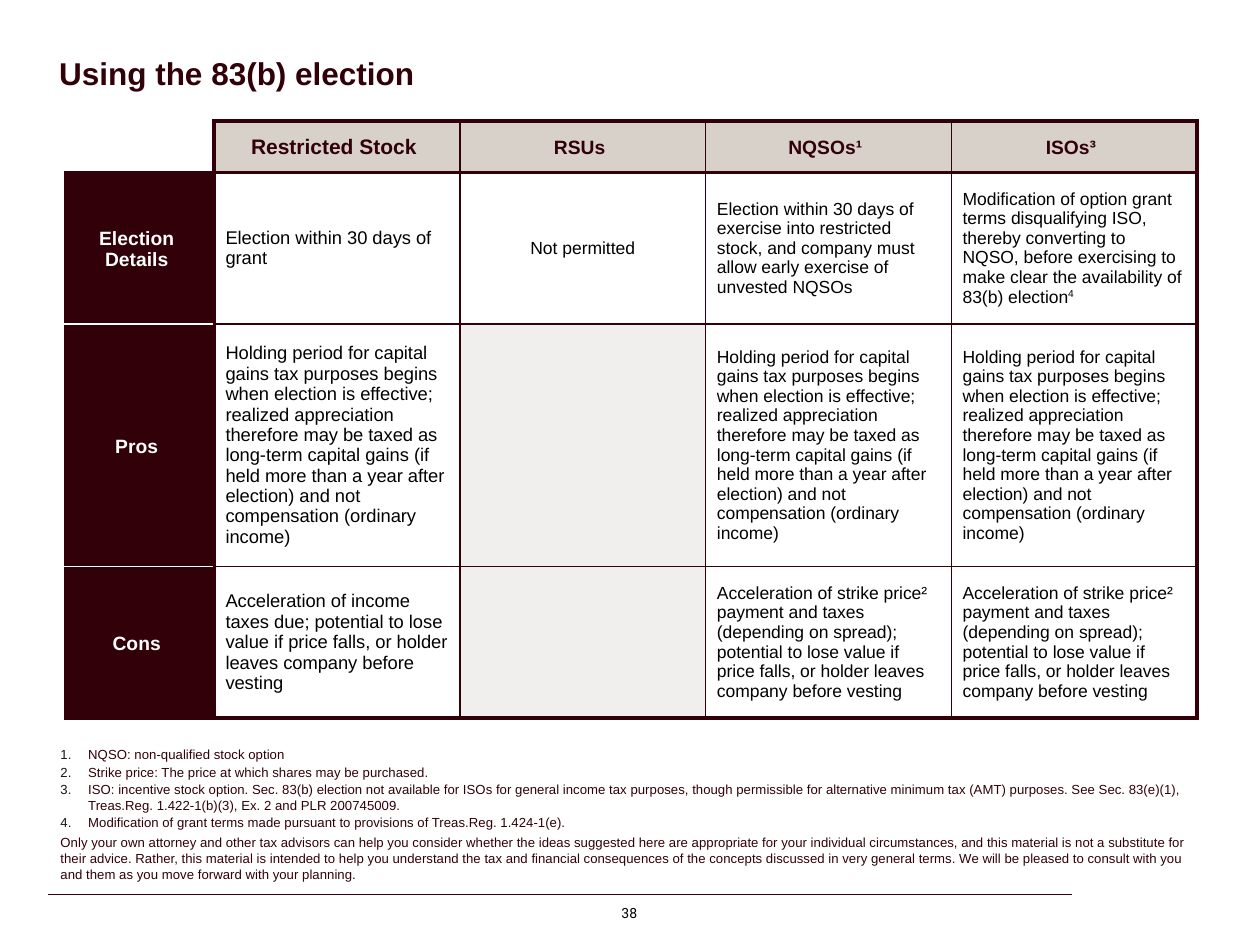
from pptx import Presentation
from pptx.dml.color import RGBColor
from pptx.enum.shapes import MSO_CONNECTOR
from pptx.enum.text import MSO_ANCHOR, PP_ALIGN
from pptx.oxml.ns import qn
from pptx.util import Inches, Pt
from lxml import etree

CENTER, LEFT = PP_ALIGN.CENTER, PP_ALIGN.LEFT
MIDDLE, BOTTOM = MSO_ANCHOR.MIDDLE, MSO_ANCHOR.BOTTOM

THEME = {
    "font": "Arial", "number_font": "Roboto",
    "maroon": "310008", "header": "D8D1CA", "empty": "F1EFED",
    "white": "FFFFFF", "black": "000000", "marker": "181512",
    "title": 18, "first_heading": 12, "heading": 11,
    "first_body": 10.5, "body": 10, "note": 7.5, "number": 8,
    "heavy": 2.25, "thin": 1, "rule": 0.5,
}

TITLE = "Using the 83(b) election"
PAGE_NUMBER = "38"
HOLDING = ("Holding period for capital gains tax purposes begins when election is effective; "
           "realized appreciation therefore may be taxed as long-term capital gains (if held "
           "more than a year after election) and not compensation (ordinary income)")
STRIKE = ("Acceleration of strike price² payment and taxes (depending on spread); potential to "
          "lose value if price falls, or holder leaves company before vesting")
ROWS = [
    ["", "Restricted Stock", "RSUs", "NQSOs¹", "ISOs³"],
    ["Election Details", "Election within 30 days of grant", "Not permitted",
     "Election within 30 days of exercise into restricted stock, and company must allow early "
     "exercise of unvested NQSOs",
     "Modification of option grant terms disqualifying ISO, thereby converting to NQSO, before "
     "exercising to make clear the availability of 83(b) election"],
    ["Pros", HOLDING, "", HOLDING, HOLDING],
    ["Cons", "Acceleration of income taxes due; potential to lose value if price falls, or "
     "holder leaves company before vesting", "", STRIKE, STRIKE],
]
SUPERSCRIPTS = {(1, 4): "4"}
COLUMN_WIDTHS = [1.18] + [1.95] * 4
ROW_HEIGHTS = [0.41, 1.2, 1.79, 1.2]

NOTES = [
    "NQSO: non-qualified stock option",
    "Strike price: The price at which shares may be purchased.",
    "ISO: incentive stock option. Sec. 83(b) election not available for ISOs for general income "
    "tax purposes, though permissible for alternative minimum tax (AMT) purposes. See Sec. "
    "83(e)(1), Treas.Reg. 1.422-1(b)(3), Ex. 2 and PLR 200745009.",
    "Modification of grant terms made pursuant to provisions of Treas.Reg. 1.424-1(e).",
]
DISCLAIMER = (
    "Only your own attorney and other tax advisors can help you consider whether the ideas "
    "suggested here are appropriate for your individual circumstances, and this material is not "
    "a substitute for their advice. Rather, this material is intended to help you understand the "
    "tax and financial consequences of the concepts discussed in very general terms. We will be "
    "pleased to consult with you and them as you move forward with your planning.")


def color(name):
    return RGBColor.from_string(THEME[name])


def write(para, text, size, ink="maroon", bold=False, align=LEFT, font="font",
          before=0, after=0, line=None, superscript=""):
    para.alignment = align
    para.space_before, para.space_after = Pt(before), Pt(after)
    if line:
        para.line_spacing = line
    for words, raised in ((text, False), (superscript, True)):
        if not words:
            continue
        span = para.add_run()
        span.text = words
        span.font.name, span.font.size = THEME[font], Pt(THEME[size])
        span.font.bold, span.font.color.rgb = bold, color(ink)
        if raised:
            span.font._element.set("baseline", "30000")


def number(para):
    """Give the paragraph an automatic number with a hanging indent."""
    props = para._p.get_or_add_pPr()
    props.set("marL", str(Inches(0.22)))
    props.set("indent", str(-Inches(0.22)))
    tint = etree.SubElement(props, qn("a:buClr"))
    etree.SubElement(tint, qn("a:srgbClr"), val=THEME["marker"])
    etree.SubElement(props, qn("a:buFont"), typeface=THEME["font"])
    etree.SubElement(props, qn("a:buAutoNum"), type="arabicPeriod")


def add_box(page, left, top, width, height, anchor, inset=0, wrap=True):
    frame = page.shapes.add_textbox(Inches(left), Inches(top), Inches(width),
                                    Inches(height)).text_frame
    frame.word_wrap, frame.vertical_anchor = wrap, anchor
    frame.margin_left = frame.margin_right = 0
    frame.margin_top = frame.margin_bottom = Inches(inset)
    return frame


def edge(row, column, side):
    """Return the (colour, weight) of one side of a cell, or None for no line."""
    last_row, last_column = len(ROWS) - 1, len(COLUMN_WIDTHS) - 1
    if (row, column) == (0, 0) and side in "LT":
        return None
    if side in "LR":
        boundary = column + (side == "R")
        heavy = boundary in (0, 1, last_column + 1)
    else:
        boundary = row + (side == "B")
        heavy = boundary in (0, 1, last_row + 1)
        if column == 0 and not heavy:
            return "white", "thin"
    return "maroon", "heavy" if heavy else "thin"


def draw_borders(cell, row, column):
    props = cell._tc.get_or_add_tcPr()
    for index, side in enumerate("LRTB"):
        line = etree.Element(qn(f"a:ln{side}"))
        props.insert(index, line)
        style = edge(row, column, side)
        if style is None:
            etree.SubElement(line, qn("a:noFill"))
            continue
        ink, weight = style
        line.set("w", str(Pt(THEME[weight])))
        fill = etree.SubElement(line, qn("a:solidFill"))
        etree.SubElement(fill, qn("a:srgbClr"), val=THEME[ink])


def cell_format(row, column):
    if row == 0:
        return dict(size="first_heading" if column == 1 else "heading",
                    bold=True, align=CENTER, after=1)
    if column == 0:
        return dict(size="heading", ink="white", bold=True, align=CENTER)
    return dict(size="first_body" if column == 1 else "body", ink="black",
                align=CENTER if column == 2 else LEFT)


def cell_fill(row, column, text):
    if row == 0:
        return "header" if text else None
    if column == 0:
        return "maroon"
    return None if text else "empty"


def add_election_table(page):
    table = page.shapes.add_table(len(ROWS), len(COLUMN_WIDTHS), Inches(0.52), Inches(0.96),
                                  Inches(sum(COLUMN_WIDTHS)), Inches(sum(ROW_HEIGHTS))).table
    table.first_row = table.horz_banding = False
    for column, width in zip(table.columns, COLUMN_WIDTHS):
        column.width = Inches(width)
    for row, height in zip(table.rows, ROW_HEIGHTS):
        row.height = Inches(height)
    for r, texts in enumerate(ROWS):
        for c, text in enumerate(texts):
            cell = table.cell(r, c)
            cell.vertical_anchor = MIDDLE
            is_label = r == 0 or c == 0
            insets = (0.04, 0.02, 0.09, 0.01 if r == 0 else 0) if is_label else (0.09,) * 4
            (cell.margin_left, cell.margin_top,
             cell.margin_right, cell.margin_bottom) = map(Inches, insets)
            fill = cell_fill(r, c, text)
            if fill:
                cell.fill.solid()
                cell.fill.fore_color.rgb = color(fill)
            else:
                cell.fill.background()
            draw_borders(cell, r, c)
            if text:
                write(cell.text_frame.paragraphs[0], text, before=2.6 if is_label else 0,
                      superscript=SUPERSCRIPTS.get((r, c), ""), **cell_format(r, c))


def main():
    deck = Presentation()
    deck.slide_width, deck.slide_height = Inches(10), Inches(7.5)
    page = deck.slides.add_slide(deck.slide_layouts[6])

    rule = page.shapes.add_connector(MSO_CONNECTOR.STRAIGHT, Inches(0.38), Inches(7.1),
                                     Inches(8.51), Inches(7.1))
    rule.line.color.rgb, rule.line.width = color("maroon"), Pt(THEME["rule"])
    etree.SubElement(rule._element.spPr, qn("a:effectLst"))

    folio = add_box(page, 4.78, 7.12, 0.43, 0.25, MIDDLE, wrap=False)
    write(folio.paragraphs[0], PAGE_NUMBER, "number", "black", align=CENTER, font="number_font")
    heading = add_box(page, 0.47, 0.31, 9.03, 0.43, BOTTOM)
    write(heading.paragraphs[0], TITLE, "title", bold=True, line=0.95)

    add_election_table(page)

    notes = add_box(page, 0.48, 6.71, 9.05, 0.34, BOTTOM, inset=0.05)
    for index, text in enumerate(NOTES):
        para = notes.add_paragraph() if index else notes.paragraphs[0]
        number(para)
        write(para, text, "note", after=2.6 if text == NOTES[-1] else 0.9)
    write(notes.add_paragraph(), DISCLAIMER, "note", after=0.9)
    deck.save("out.pptx")


if __name__ == "__main__":
    main()
